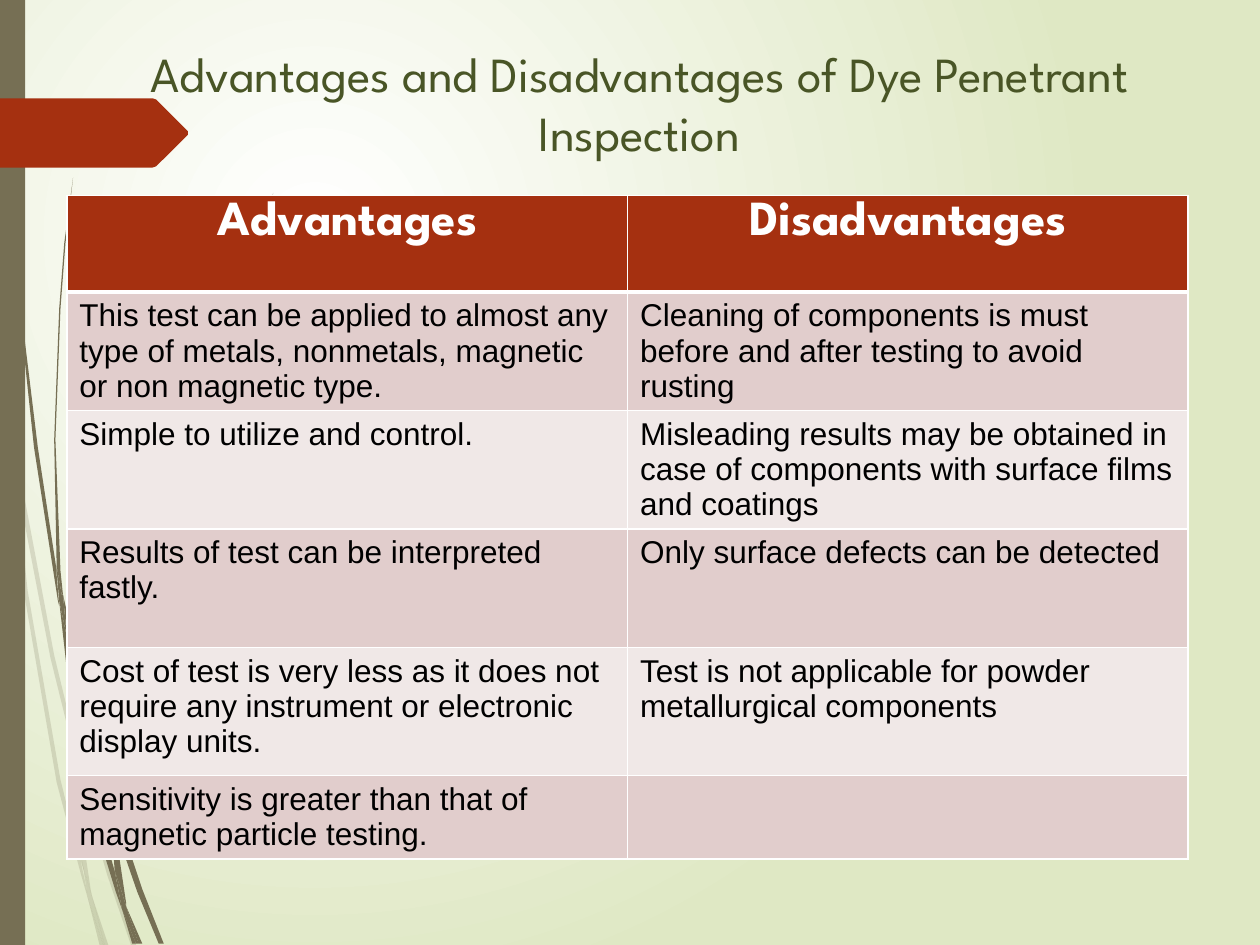
from dataclasses import dataclass

from lxml.etree import SubElement
from pptx import Presentation
from pptx.dml.color import RGBColor
from pptx.enum.shapes import MSO_SHAPE
from pptx.enum.text import MSO_ANCHOR, MSO_AUTO_SIZE, PP_ALIGN
from pptx.oxml.ns import qn
from pptx.util import Pt

COLORS = {
    "glow": "FFFFFF",
    "backdrop": "DFE8C4",
    "stalk": "766F54",
    "accent": "A53010",
    "title": "495526",
    "header_text": "FFFFFF",
    "body_text": "000000",
    "border": "FFFFFF",
    "band_dark": "E1CDCC",
    "band_light": "F0E8E7",
}
GRID_STEP = 0.72
DISPLAY_FONT = "League Spartan"
TITLE = "Advantages and Disadvantages of Dye Penetrant Inspection"
COMPARISON = [
    ("Advantages", "Disadvantages"),
    ("This test can be applied to almost any type of metals, nonmetals, magnetic or non magnetic type.",
     "Cleaning of components is must before and after testing to avoid rusting"),
    ("Simple to utilize and control.",
     "Misleading results may be obtained in case of components with surface films and coatings"),
    ("Results of test can be interpreted fastly.", "Only surface defects can be detected"),
    ("Cost of test is very less as it does not require any instrument or electronic display units.",
     "Test is not applicable for powder metallurgical components"),
    ("Sensitivity is greater than that of magnetic particle testing.", ""),
]
ROW_HEIGHTS = [55.2, 67.7, 67.7, 67.7, 73.4, 47.5]
COLUMN_WIDTH = 320.4

Outline = list[tuple[int, int]]

PALE_STALKS: list[Outline] = [
    [(8, 350), (6, 322), (0, 282), (0, 299), (7, 344)],
    [(40, 522), (59, 599), (59, 586), (43, 520), (10, 345), (12, 376)],
    [(64, 607), (61, 596), (61, 610), (85, 694), (104, 750), (108, 750), (88, 692)],
    [(83, 750), (86, 750), (73, 711)],
    [(64, 683), (48, 619), (22, 469), (12, 376), (8, 350), (19, 470), (45, 621),
     (64, 693), (70, 714), (69, 707)],
    [(58, 599), (60, 646), (64, 683), (67, 692), (73, 711), (72, 706), (63, 646),
     (61, 610), (61, 608)],
    [(61, 584), (76, 462), (111, 349), (159, 245), (187, 198), (201, 175), (217, 154),
     (217, 153), (201, 175), (186, 197), (158, 244), (110, 348), (75, 461), (59, 584),
     (59, 586), (61, 596)],
    [(70, 714), (79, 750), (82, 750)],
    [(61, 608), (61, 610), (61, 596), (59, 586), (58, 599)],
    [(67, 692), (65, 683), (69, 707), (70, 714), (82, 750), (83, 750), (73, 711)],
]
DARK_STALKS: list[Outline] = [
    [(5, 110), (14, 233), (27, 355), (46, 477), (47, 481), (45, 457), (45, 453),
     (30, 355), (15, 232), (6, 109), (4, 48), (3, 0), (2, 0), (3, 48)],
    [(73, 592), (88, 645), (88, 633), (88, 631), (77, 590), (50, 472), (53, 505)],
    [(94, 649), (91, 641), (91, 656), (109, 708), (126, 749), (130, 749), (113, 706)],
    [(91, 691), (81, 657), (60, 556), (53, 505), (47, 477), (56, 557), (77, 659),
     (92, 708), (97, 722), (96, 717)],
    [(50, 472), (48, 453), (44, 349), (48, 245), (52, 193), (58, 141), (51, 193),
     (47, 245), (43, 349), (45, 449), (49, 472)],
    [(110, 749), (113, 749), (100, 719)],
    [(47, 477), (53, 505), (50, 472), (49, 472), (45, 449), (45, 453)],
    [(91, 633), (103, 552), (131, 476), (169, 406), (191, 374), (203, 359), (216, 344),
     (215, 344), (203, 358), (191, 373), (168, 405), (129, 474), (101, 551), (88, 631),
     (91, 641)],
    [(97, 722), (105, 749), (108, 749)],
    [(88, 645), (91, 691), (96, 706), (100, 719), (100, 716), (91, 656), (90, 651)],
    [(88, 645), (90, 651), (91, 656), (91, 641), (88, 631), (88, 633)],
    [(96, 706), (91, 691), (96, 717), (97, 722), (108, 749), (110, 749), (100, 719)],
]
ARROW_TAB: Outline = [(149, 107), (124, 132), (121, 133), (0, 133), (0, 78), (121, 78),
                      (124, 79), (149, 104)]


@dataclass(frozen=True)
class TextStyle:
    font: str
    size: float
    color: str
    bold: bool
    align: PP_ALIGN


TITLE_STYLE = TextStyle(DISPLAY_FONT, 28, "title", False, PP_ALIGN.CENTER)
HEADER_STYLE = TextStyle(DISPLAY_FONT, 28, "header_text", True, PP_ALIGN.CENTER)
BODY_STYLE = TextStyle("Arial", 18, "body_text", False, PP_ALIGN.LEFT)


def rgb(name: str) -> RGBColor:
    return RGBColor.from_string(COLORS[name])


def apply_format(target, values: dict) -> None:
    for attribute, value in values.items():
        setattr(target, attribute, value)


def paint(shape, color: str, opacity: int = 100) -> None:
    shape.shadow.inherit = False
    shape.fill.solid()
    shape.fill.fore_color.rgb = rgb(color)
    shape.line.fill.background()
    if opacity < 100:
        tint = shape.fill._xPr.find(".//" + qn("a:srgbClr"))
        SubElement(tint, qn("a:alpha"), val=str(opacity * 1000))


def write_text(frame, text: str, style: TextStyle) -> None:
    paragraph = frame.paragraphs[0]
    paragraph.alignment = style.align
    run = paragraph.add_run()
    run.text = text
    apply_format(run.font, {"name": style.font, "size": Pt(style.size), "bold": style.bold})
    run.font.color.rgb = rgb(style.color)


def draw_background(slide) -> None:
    fill = slide.background.fill
    fill.gradient()
    for stop, color in zip(fill.gradient_stops, ("glow", "backdrop")):
        stop.color.rgb = rgb(color)
    gradient = slide._element.find(".//" + qn("a:gradFill"))
    gradient.remove(gradient.find(qn("a:lin")))
    circle = SubElement(gradient, qn("a:path"), {"path": "circle"})
    SubElement(circle, qn("a:fillToRect"), l="50000", t="50000", r="100000", b="100000")


def draw_outline(slide, outline: Outline, color: str, opacity: int = 100) -> None:
    corners = [(Pt(x * GRID_STEP), Pt(y * GRID_STEP)) for x, y in outline]
    builder = slide.shapes.build_freeform(*corners[0])
    builder.add_line_segments(corners[1:], close=True)
    paint(builder.convert_to_shape(), color, opacity)


def draw_title(slide) -> None:
    frame = slide.shapes.add_textbox(Pt(36), Pt(21.6), Pt(658.8), Pt(67)).text_frame
    apply_format(frame, {"word_wrap": True, "auto_size": MSO_AUTO_SIZE.NONE,
                         "vertical_anchor": MSO_ANCHOR.TOP})
    write_text(frame, TITLE, TITLE_STYLE)


def draw_borders(cell, widths: dict[str, float]) -> None:
    properties = cell._tc.get_or_add_tcPr()
    for side, width in widths.items():
        line = SubElement(properties, qn(f"a:{side}"), w=str(Pt(width)))
        fill = SubElement(line, qn("a:solidFill"))
        SubElement(fill, qn("a:srgbClr"), val=COLORS["border"])


def draw_comparison(slide) -> None:
    table = slide.shapes.add_table(len(COMPARISON), 2, Pt(38.2), Pt(111.6),
                                   Pt(2 * COLUMN_WIDTH), Pt(sum(ROW_HEIGHTS))).table
    for column in table.columns:
        column.width = Pt(COLUMN_WIDTH)
    for index, (height, texts) in enumerate(zip(ROW_HEIGHTS, COMPARISON)):
        table.rows[index].height = Pt(height)
        band = "accent" if index == 0 else ("band_light", "band_dark")[index % 2]
        style = BODY_STYLE if index else HEADER_STYLE
        widths = {"lnL": 1, "lnR": 1, "lnT": 3 if index == 1 else 1, "lnB": 1 if index else 3}
        for cell, text in zip(table.rows[index].cells, texts):
            draw_borders(cell, widths)
            cell.fill.solid()
            cell.fill.fore_color.rgb = rgb(band)
            if text:
                write_text(cell.text_frame, text, style)


def main() -> None:
    deck = Presentation()
    apply_format(deck, {"slide_width": Pt(720), "slide_height": Pt(540)})
    slide = deck.slides.add_slide(deck.slide_layouts[6])
    draw_background(slide)
    for outlines, opacity in ((PALE_STALKS, 20), (DARK_STALKS, 100)):
        for outline in outlines:
            draw_outline(slide, outline, "stalk", opacity)
    side_bar = slide.shapes.add_shape(MSO_SHAPE.RECTANGLE, 0, 0, Pt(14.4), Pt(540))
    paint(side_bar, "stalk")
    draw_outline(slide, ARROW_TAB, "accent")
    draw_title(slide)
    draw_comparison(slide)
    deck.save("out.pptx")


if __name__ == "__main__":
    main()
